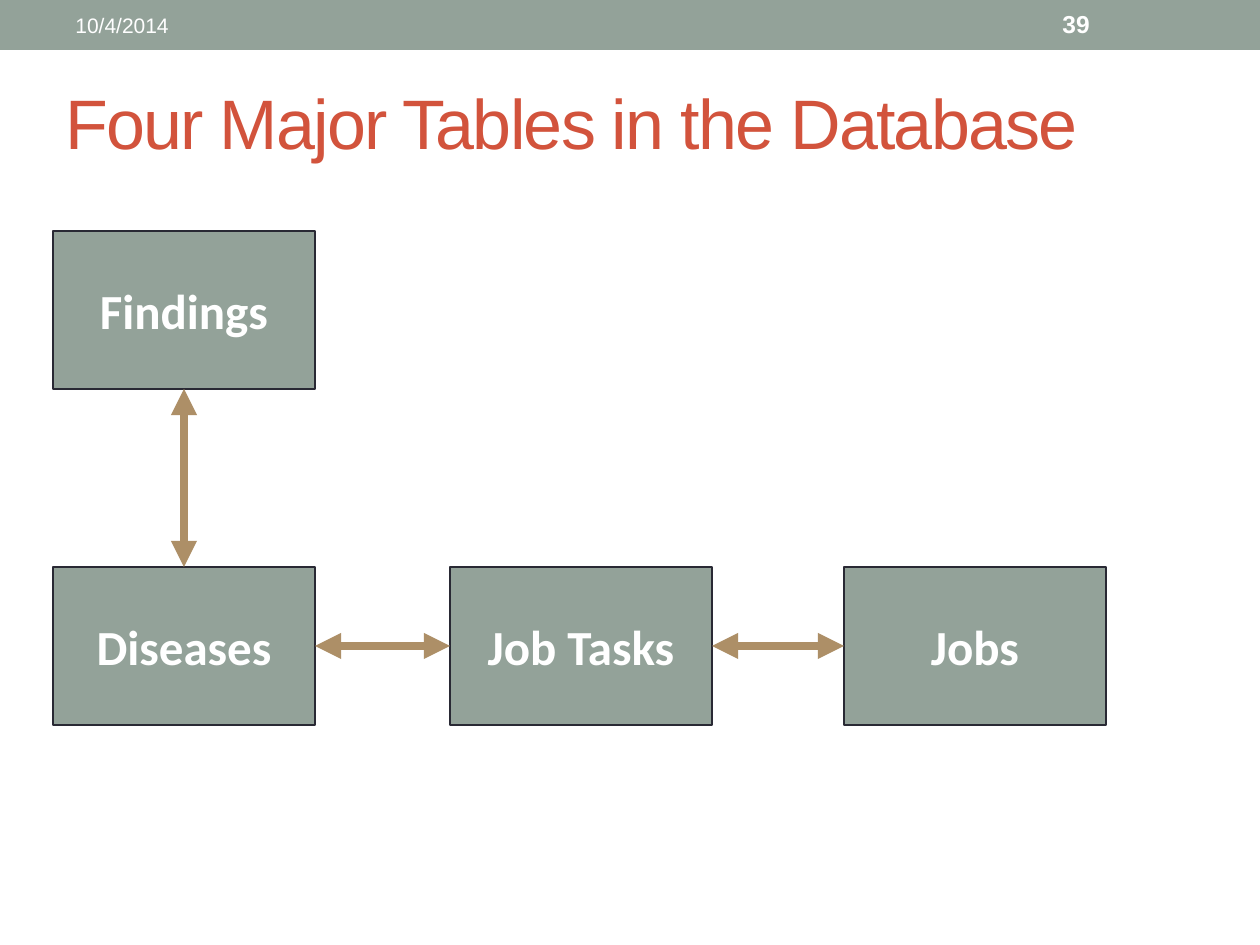
from dataclasses import dataclass

import pptx
import pptx.dml.color
import pptx.enum.shapes
import pptx.enum.text
import pptx.oxml
import pptx.oxml.ns
import pptx.util
from pptx.dml.color import RGBColor
from pptx.shapes.autoshape import Shape
from pptx.slide import Slide

EMU_PER_PX = 914400 / 126

SAGE = RGBColor(0x93, 0xA2, 0x99)
INK = RGBColor(0x29, 0x29, 0x34)
RED = RGBColor(0xD2, 0x53, 0x3C)
TAN = RGBColor(0xAD, 0x8F, 0x67)
WHITE = RGBColor(0xFF, 0xFF, 0xFF)

MIDDLE = pptx.enum.text.MSO_ANCHOR.MIDDLE
TOP = pptx.enum.text.MSO_ANCHOR.TOP
LEFT_ALIGN = pptx.enum.text.PP_ALIGN.LEFT
CENTER_ALIGN = pptx.enum.text.PP_ALIGN.CENTER

# Connection sites of a rectangle
SITE_TOP, SITE_LEFT, SITE_BOTTOM, SITE_RIGHT = range(4)

BOX_WIDTH, BOX_HEIGHT = 262, 158
UPPER_ROW, LOWER_ROW = 231, 567


@dataclass(frozen=True)
class Area:
    left: int
    top: int
    width: int
    height: int

    def emu(self) -> list[int]:
        return [px(n) for n in (self.left, self.top, self.width, self.height)]


@dataclass(frozen=True)
class Style:
    size: int
    color: RGBColor = WHITE
    font: str = "Arial"
    bold: bool = False
    spacing: int = 0  # hundredths of a point


@dataclass(frozen=True)
class Label:
    text: str
    area: Area
    style: Style
    anchor: pptx.enum.text.MSO_ANCHOR = MIDDLE


@dataclass(frozen=True)
class TableBox:
    name: str
    left: int
    top: int


@dataclass(frozen=True)
class Link:
    start: str
    start_site: int
    end: str
    end_site: int


BOX_STYLE = Style(28, font="Calibri", bold=True)

LABELS = [
    Label("Four Major Tables in the Database", Area(53, 32, 1144, 179),
          Style(40, RED, spacing=-100)),
    Label("10/4/2014", Area(63, 3, 399, 45), Style(12)),
    Label("39", Area(1050, 3, 147, 45), Style(14, bold=True), TOP),
]

TABLE_BOXES = [
    TableBox("Findings", 53, UPPER_ROW),
    TableBox("Diseases", 53, LOWER_ROW),
    TableBox("Job Tasks", 450, LOWER_ROW),
    TableBox("Jobs", 844, LOWER_ROW),
]

LINKS = [
    Link("Diseases", SITE_RIGHT, "Job Tasks", SITE_LEFT),
    Link("Job Tasks", SITE_RIGHT, "Jobs", SITE_LEFT),
    Link("Findings", SITE_BOTTOM, "Diseases", SITE_TOP),
]


def px(length: int) -> int:
    return round(length * EMU_PER_PX)


def write_text(shape: Shape, text: str, style: Style, anchor=MIDDLE,
               alignment=LEFT_ALIGN, wrap: bool = True) -> None:
    frame = shape.text_frame
    frame.word_wrap = wrap
    frame.vertical_anchor = anchor
    paragraph = frame.paragraphs[0]
    paragraph.alignment = alignment
    run = paragraph.add_run()
    run.text = text
    run.font.name = style.font
    run.font.size = pptx.util.Pt(style.size)
    run.font.bold = style.bold
    run.font.color.rgb = style.color
    if style.spacing:
        run.font._element.set("spc", str(style.spacing))


def add_rectangle(slide: Slide, area: Area) -> Shape:
    shape = slide.shapes.add_shape(
        pptx.enum.shapes.MSO_SHAPE.RECTANGLE, *area.emu())
    shape.shadow.inherit = False
    shape.fill.solid()
    shape.fill.fore_color.rgb = SAGE
    shape.line.fill.background()
    return shape


def add_label(slide: Slide, label: Label) -> None:
    shape = slide.shapes.add_textbox(*label.area.emu())
    write_text(shape, label.text, label.style, label.anchor)


def add_table_box(slide: Slide, box: TableBox) -> Shape:
    shape = add_rectangle(slide, Area(box.left, box.top, BOX_WIDTH, BOX_HEIGHT))
    shape.line.color.rgb = INK
    shape.line.width = pptx.util.Pt(1)
    write_text(shape, box.name, BOX_STYLE, alignment=CENTER_ALIGN, wrap=False)
    return shape


def add_link(slide: Slide, link: Link, boxes: dict[str, Shape]) -> None:
    connector = slide.shapes.add_connector(
        pptx.enum.shapes.MSO_CONNECTOR.STRAIGHT, 0, 0, 0, 0)
    connector.begin_connect(boxes[link.start], link.start_site)
    connector.end_connect(boxes[link.end], link.end_site)
    connector.line.color.rgb = TAN
    connector.line.width = pptx.util.Pt(5)

    # Arrowheads at both ends, no shadow
    line = connector.line._get_or_add_ln()
    for end in ("a:headEnd", "a:tailEnd"):
        arrowhead = pptx.oxml.parse_xml(
            f'<{end} {pptx.oxml.ns.nsdecls("a")} type="triangle"/>')
        line.append(arrowhead)
    connector._element.spPr.append(pptx.oxml.parse_xml(
        f'<a:effectLst {pptx.oxml.ns.nsdecls("a")}/>'))


def main() -> None:
    presentation = pptx.Presentation()
    presentation.slide_width = px(1260)
    presentation.slide_height = px(945)
    slide = presentation.slides.add_slide(presentation.slide_layouts[6])

    # Header band, title, date and page number
    add_rectangle(slide, Area(0, 0, 1260, 50))
    for label in LABELS:
        add_label(slide, label)

    # Database tables and their relations
    boxes = {box.name: add_table_box(slide, box) for box in TABLE_BOXES}
    for link in LINKS:
        add_link(slide, link, boxes)

    presentation.save("out.pptx")


if __name__ == "__main__":
    main()
